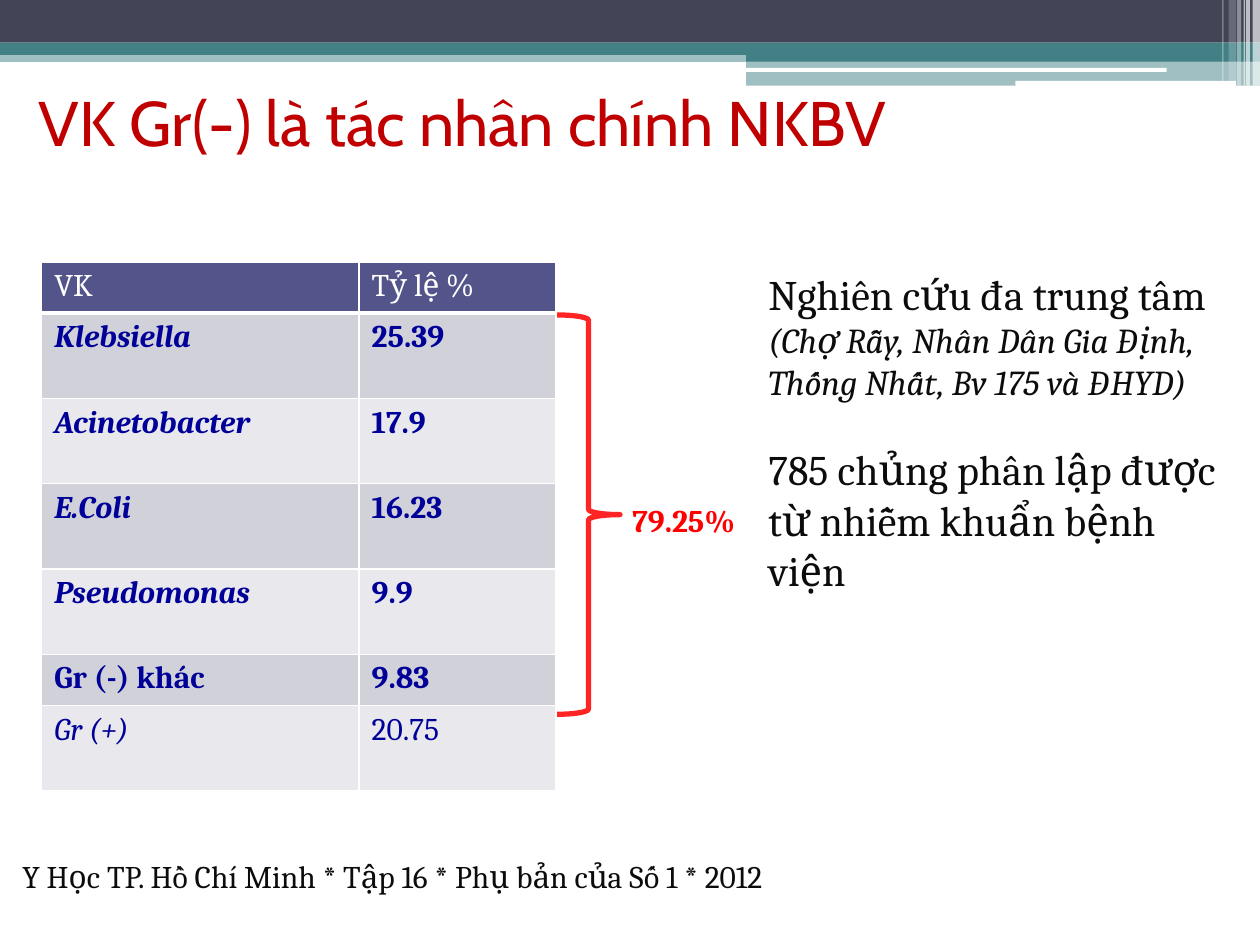
from dataclasses import dataclass
from lxml.etree import SubElement as Sub
from pptx import Presentation
from pptx.dml.color import RGBColor as RGB
from pptx.enum.shapes import MSO_SHAPE as Kind
from pptx.enum.text import MSO_ANCHOR as Anchor, PP_ALIGN as Align
from pptx.oxml.ns import qn
from pptx.util import Cm, Pt


@dataclass(frozen=True)
class Theme:
    dark: str = "424456"
    teal: str = "438086"
    white: str = "FFFFFF"
    title: str = "C00000"
    head: str = "53548A"
    odd: str = "D1D1DA"
    even: str = "E9E9ED"
    navy: str = "000099"
    ink: str = "0C0C0C"
    brace: str = "FF2525"
    red: str = "FF0000"
    sans: str = "Cabin"
    serif: str = "Cambria"
    huge: int = 36
    big: int = 24
    mid: int = 20
    base: int = 18


look = Theme()


def style(run, size, color, bold=False, slant=False, face=look.serif):
    font = run.font
    font.name, font.size = face, Pt(size)
    font.bold, font.italic = bold, slant
    font.color.rgb = RGB.from_string(color)


def box(left, top, width, height):
    frame = slide.shapes.add_textbox(Cm(left), Cm(top), Cm(width), Cm(height)).text_frame
    frame.word_wrap = True
    return frame


deck = Presentation()
deck.slide_width, deck.slide_height = Cm(25.4), Cm(19.05)
slide = deck.slides.add_slide(deck.slide_layouts[5])

bars = [
    (Kind.RECTANGLE, 0, 1.02, 25.4, 0.23, look.teal, 50),
    (Kind.RECTANGLE, 0, 0, 25.4, 0.86, look.dark, 100),
    (Kind.RECTANGLE, 0, 0.86, 25.4, 0.25, look.teal, 100),
    (Kind.RECTANGLE, 15.04, 0.99, 10.36, 0.25, look.teal, 100),
    (Kind.RECTANGLE, 15.04, 1.22, 10.36, 0.51, look.teal, 50),
    (Kind.ROUNDED_RECTANGLE, 15.01, 1.37, 8.51, 0.08, look.white, 100),
    (Kind.ROUNDED_RECTANGLE, 20.47, 1.63, 4.45, 0.1, look.white, 100),
]
stripes = [
    (25.25, 0.15, 1.73, 65),
    (25.12, 0.08, 1.73, 65),
    (25.07, 0.03, 1.73, 60),
    (24.94, 0.08, 1.73, 40),
    (24.77, 0.15, 1.63, 20),
    (24.64, 0.03, 1.63, 30),
]
bars += [(Kind.RECTANGLE, x, 0, w, h, look.white, a) for x, w, h, a in stripes]

for kind, x, y, w, h, color, alpha in bars:
    bar = slide.shapes.add_shape(kind, Cm(x), Cm(y), Cm(w), Cm(h))
    bar.shadow.inherit = False
    bar.line.fill.background()
    bar.fill.solid()
    bar.fill.fore_color.rgb = RGB.from_string(color)
    if alpha < 100:
        tint = bar._element.spPr.find(qn("a:solidFill")).find(qn("a:srgbClr"))
        Sub(tint, qn("a:alpha"), val=str(alpha * 1000))

title = slide.shapes.title
title.left, title.top, title.width, title.height = Cm(0.53), Cm(1.27), Cm(23.93), Cm(2.34)
title.text_frame.text = "VK Gr(-) là tác nhân chính NKBV"
title.text_frame.vertical_anchor = Anchor.MIDDLE
line = title.text_frame.paragraphs[0]
line.alignment = Align.LEFT
style(line.runs[0], look.huge, look.title, face=look.sans)

short, tall = 1.03, 1.72
rows = [
    ("VK", "Tỷ lệ %", short),
    ("Klebsiella", "25.39", tall),
    ("Acinetobacter", "17.9", tall),
    ("E.Coli", "16.23", tall),
    ("Pseudomonas", "9.9", tall),
    ("Gr (-) khác", "9.83", short),
    ("Gr (+)", "20.75", tall),
]
grid = slide.shapes.add_table(
    len(rows), 2, Cm(0.84), Cm(5.28), Cm(10.36), Cm(sum(row[2] for row in rows))
).table
grid.columns[0].width, grid.columns[1].width = Cm(6.4), Cm(3.96)
last = len(rows) - 1
for r, (name, rate, high) in enumerate(rows):
    grid.rows[r].height = Cm(high)
    for c, text in enumerate((name, rate)):
        cell = grid.cell(r, c)
        props = cell._tc.get_or_add_tcPr()
        for side in "LRTB":
            thick = 3 if r == 0 and side == "B" else 1
            edge = Sub(props, qn("a:ln" + side), w=str(Pt(thick)))
            Sub(Sub(edge, qn("a:solidFill")), qn("a:srgbClr"), val=look.white)
        cell.fill.solid()
        shade = look.head if r == 0 else look.odd if r % 2 else look.even
        cell.fill.fore_color.rgb = RGB.from_string(shade)
        cell.text_frame.text = text
        style(
            cell.text_frame.paragraphs[0].runs[0],
            look.base,
            look.navy if r else look.white,
            bold=0 < r < last,
            slant=c == 0 and r in (1, 2, 3, 4, last),
        )

note = box(0.2, 17.15, 20.12, 1.02)
note.text = "Y Học TP. Hồ Chí Minh * Tập 16 * Phụ bản của Số 1 * 2012"
style(note.paragraphs[0].runs[0], look.base, look.ink)

study = box(15.24, 5.28, 9.73, 7.95)
study.text = "Nghiên cứu đa trung tâm "
first = study.paragraphs[0]
style(first.runs[0], look.big, look.ink)
sites = first.add_run()
sites.text = "(Chợ Rẫy, Nhân Dân Gia Định, Thống Nhất, Bv 175 và ĐHYD)"
style(sites, look.mid, look.ink, slant=True)
count = study.add_paragraph()
count.text = "785 chủng phân lập được từ nhiễm khuẩn bệnh viện"
count.space_before = Pt(23.5)
style(count.runs[0], look.big, look.ink)

brace = slide.shapes.add_shape(Kind.RIGHT_BRACE, Cm(11.23), Cm(6.35), Cm(1.27), Cm(8.05))
brace.shadow.inherit = False
brace.fill.background()
brace.line.color.rgb = RGB.from_string(look.brace)
brace.line.width = Pt(3)

total = box(12.5, 9.98, 2.74, 1.02)
total.text = "79.25%"
style(total.paragraphs[0].runs[0], look.base, look.red, bold=True)

deck.save("out.pptx")
